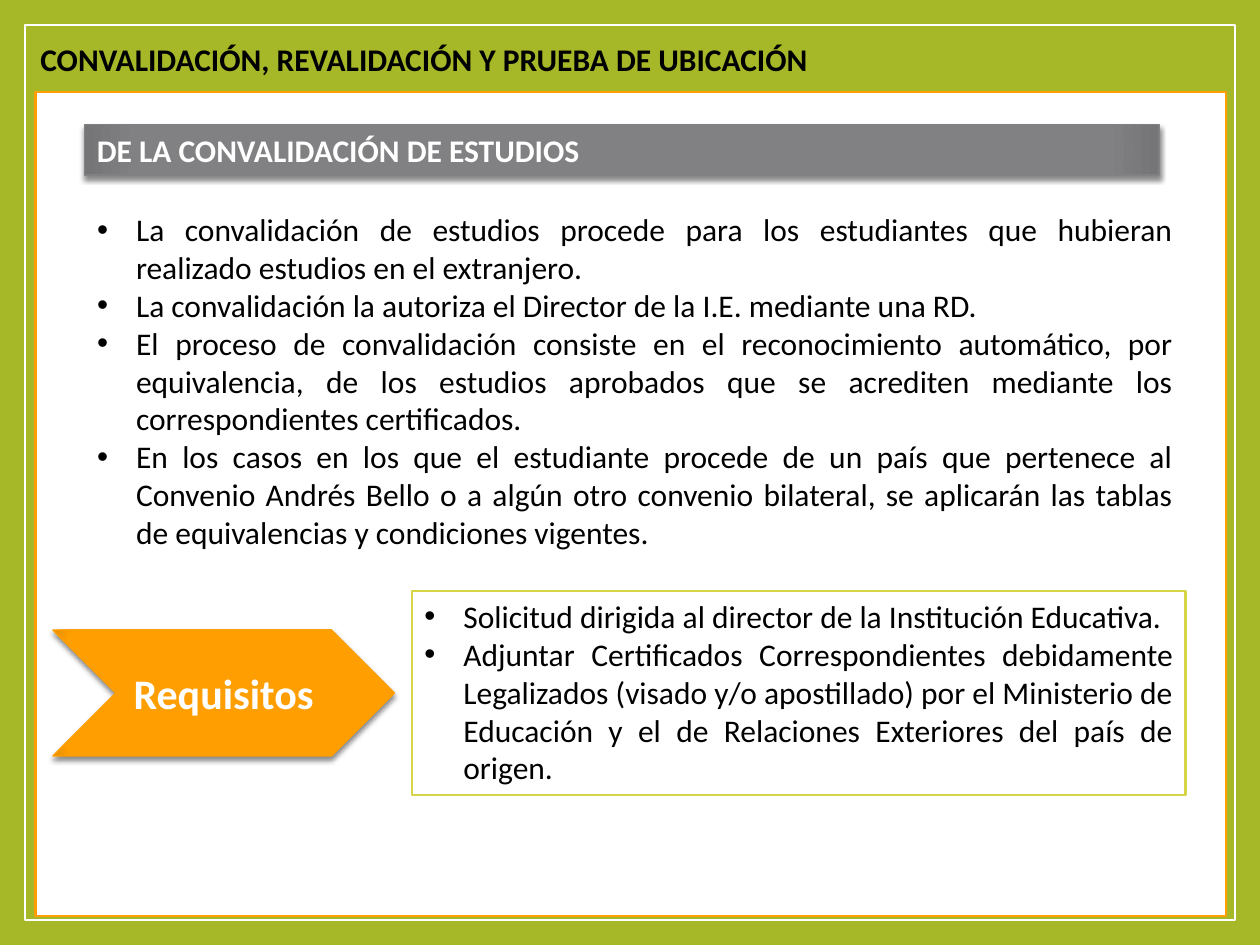
import lxml.etree
import pptx
import pptx.dml.color
import pptx.enum.shapes
import pptx.enum.text
import pptx.oxml
import pptx.oxml.ns
import pptx.util

Inches = pptx.util.Inches
Pt = pptx.util.Pt
ALIGN = pptx.enum.text.PP_ALIGN
ANCHOR = pptx.enum.text.MSO_ANCHOR
SHAPE = pptx.enum.shapes.MSO_SHAPE
NAMESPACE = pptx.oxml.ns.nsdecls("a")

COLORS = {
    "green": "A6B727", "white": "FFFFFF", "black": "000000",
    "orange": "FE9E00", "dark_orange": "E78F00",
    "gray": "818183", "dark_gray": "757577", "lime": "D7D447",
}
HEADING = {"size": Pt(18), "bold": True}
BODY = {"size": Pt(18), "bold": False}
LABEL = {"size": Pt(24), "bold": True}

RULES = [
    "La convalidación de estudios procede para los estudiantes que hubieran "
    "realizado estudios en el extranjero.",
    "La convalidación la autoriza el Director de la I.E. mediante una RD.",
    "El proceso de convalidación consiste en el reconocimiento automático, por "
    "equivalencia, de los estudios aprobados que se acrediten mediante los "
    "correspondientes certificados.",
    "En los casos en los que el estudiante procede de un país que pertenece al "
    "Convenio Andrés Bello o a algún otro convenio bilateral, se aplicarán las "
    "tablas de equivalencias y condiciones vigentes.",
]
REQUIREMENTS = [
    "Solicitud dirigida al director de la Institución Educativa.",
    "Adjuntar Certificados Correspondientes debidamente Legalizados (visado y/o "
    "apostillado) por el Ministerio de Educación y el de Relaciones Exteriores "
    "del país de origen.",
]


def rgb(name):
    return pptx.dml.color.RGBColor.from_string(COLORS[name])


def apply(target, values):
    for name, value in values.items():
        setattr(target, name, value)


def place(shape, box):
    names = ("left", "top", "width", "height")
    apply(shape, dict(zip(names, map(Inches, box))))


def write(shape, lines, font, color, align=ALIGN.LEFT, anchor=ANCHOR.TOP,
          wrap=True, bullets=False):
    frame = shape.text_frame
    frame.text = "\n".join(lines)
    apply(frame, {
        "auto_size": pptx.enum.text.MSO_AUTO_SIZE.NONE,
        "word_wrap": wrap, "vertical_anchor": anchor,
        "margin_left": Inches(0.1), "margin_right": Inches(0.1),
        "margin_top": Inches(0.05), "margin_bottom": Inches(0.05),
    })
    for para in frame.paragraphs:
        apply(para, {"alignment": align, "space_before": Pt(0)})
        if bullets:
            add_bullet(para)
        for span in para.runs:
            apply(span.font, {"name": "Calibri", **font})
            span.font.color.rgb = rgb(color)


def add_bullet(para):
    properties = para._p.get_or_add_pPr()
    indent = Inches(0.31)
    properties.set("marL", str(indent))
    properties.set("indent", str(-indent))
    properties.append(pptx.oxml.parse_xml(
        f'<a:buFont {NAMESPACE} typeface="Arial"/>'))
    properties.append(pptx.oxml.parse_xml(
        f'<a:buChar {NAMESPACE} char="•"/>'))


def add_block(page, kind, box, fill, line, weight):
    shape = page.shapes.add_shape(kind, *map(Inches, box))
    shape.shadow.inherit = False
    shape.fill.solid()
    shape.fill.fore_color.rgb = rgb(fill)
    shape.line.color.rgb = rgb(line)
    shape.line.width = Pt(weight)
    return shape


def add_raised_block(page, kind, box, color, edge):
    """Block with a darker gradient edge and a soft shadow below."""
    shape = add_block(page, kind, box, color, color, 0.79)
    properties = shape.element.spPr
    stops = "".join(
        f'<a:gs pos="{position * 1000}"><a:srgbClr val="{COLORS[name]}"/></a:gs>'
        for position, name in ((0, color), (90, color), (100, edge)))
    gradient = pptx.oxml.parse_xml(
        f'<a:gradFill {NAMESPACE} rotWithShape="1"><a:gsLst>{stops}</a:gsLst>'
        '<a:path path="circle"><a:fillToRect l="100000" t="100000" '
        'r="100000" b="100000"/></a:path></a:gradFill>')
    solid = properties.find(pptx.oxml.ns.qn("a:solidFill"))
    properties.replace(solid, gradient)
    effects = properties.find(pptx.oxml.ns.qn("a:effectLst"))
    effects.append(pptx.oxml.parse_xml(
        f'<a:outerShdw {NAMESPACE} blurRad="{Pt(3)}" dist="{Pt(2)}" '
        'dir="5400000" rotWithShape="0"><a:srgbClr val="000000">'
        '<a:alpha val="45000"/></a:srgbClr></a:outerShdw>'))
    return shape


def bring_to_front(shape):
    shape.element.getparent().append(shape.element)


def build_frame(page, outer, panel):
    page.background.fill.solid()
    page.background.fill.fore_color.rgb = rgb("green")
    add_block(page, SHAPE.RECTANGLE, outer, "green", "white", 1)
    add_block(page, SHAPE.RECTANGLE, panel, "white", "orange", 1.5)


def build_title(page, box):
    title = page.shapes.title
    place(title, box)
    write(title, ["CONVALIDACIÓN, REVALIDACIÓN Y PRUEBA DE UBICACIÓN"],
          HEADING, "black", wrap=False)
    bring_to_front(title)


def build_rules(page, box):
    left, top, width, height = box
    body = page.placeholders[1]
    place(body, (left, top + 0.63, width, height - 0.63))
    write(body, RULES, BODY, "black", ALIGN.JUSTIFY, bullets=True)
    bring_to_front(body)
    band = add_raised_block(page, SHAPE.RECTANGLE, (left, top, 8.53, 0.4),
                            "gray", "dark_gray")
    write(band, ["DE LA CONVALIDACIÓN DE ESTUDIOS"], HEADING, "white")


def build_requirements(page, box):
    left, top, width, height = box
    offset = 2.85
    card = add_block(page, SHAPE.RECTANGLE,
                     (left + offset, top, width - offset, height),
                     "white", "lime", 1.5)
    write(card, REQUIREMENTS, BODY, "black", ALIGN.JUSTIFY, bullets=True)
    arrow = add_raised_block(page, SHAPE.CHEVRON,
                             (left, top + (height - 1) / 2, 2.71, 1),
                             "orange", "dark_orange")
    write(arrow, ["Requisitos"], LABEL, "white", ALIGN.CENTER, ANCHOR.MIDDLE)


def main():
    deck = pptx.Presentation()
    apply(deck, {"slide_width": Inches(10), "slide_height": Inches(7.5)})
    page = deck.slides.add_slide(deck.slide_layouts[1])
    # Background frame and white panel
    build_frame(page, (0.2, 0.2, 9.6, 7.1), (0.28, 0.73, 9.45, 6.54))
    # Slide title
    build_title(page, (0.22, 0.27, 6.35, 0.4))
    # Section band with its rules
    build_rules(page, (0.67, 0.99, 8.74, 3.46))
    # Requirements arrow and card
    build_requirements(page, (0.42, 4.69, 8.99, 1.62))
    deck.save("out.pptx")


if __name__ == "__main__":
    main()
